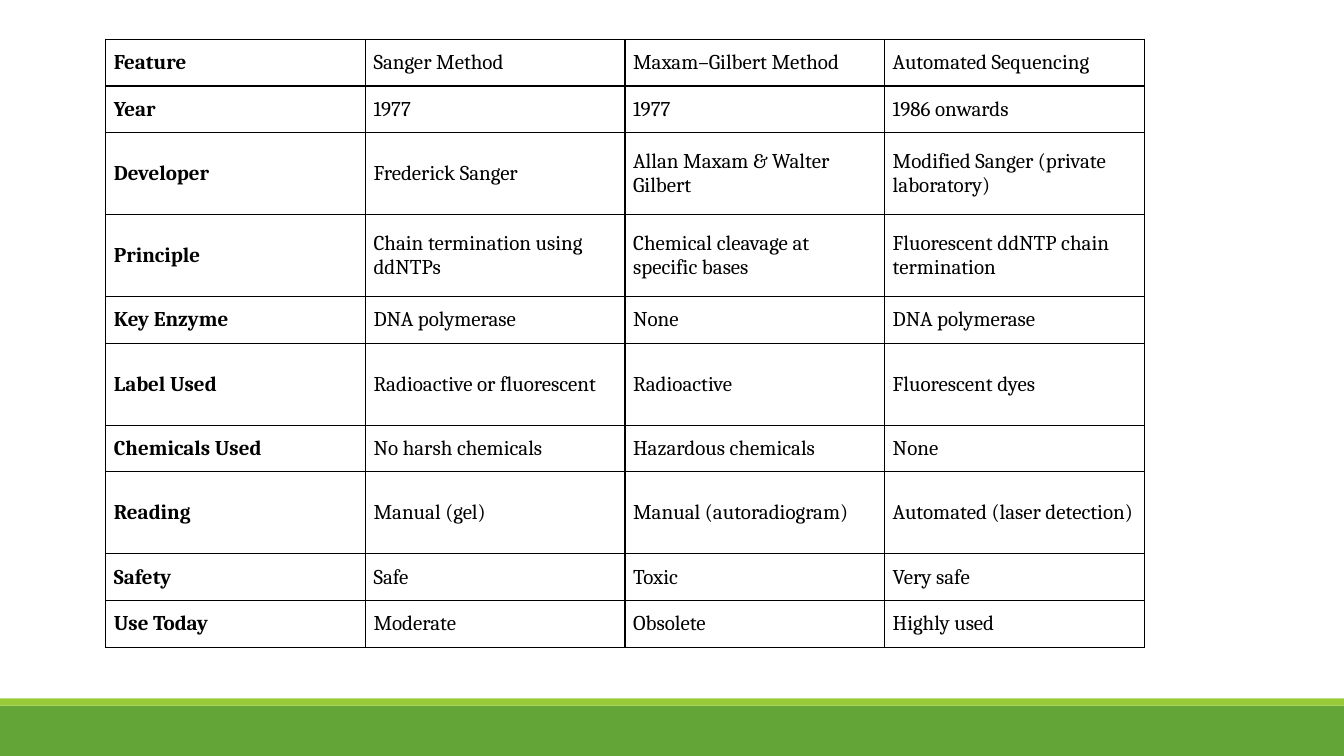
from dataclasses import dataclass

from lxml.etree import SubElement
from pptx import Presentation
from pptx.dml.color import RGBColor as Color
from pptx.enum.shapes import MSO_SHAPE as Shape
from pptx.enum.text import MSO_ANCHOR as Anchor
from pptx.oxml.ns import qn
from pptx.slide import Slide
from pptx.table import _Cell as Cell
from pptx.util import Inches, Length, Pt


@dataclass(frozen=True)
class Theme:
    font: str = "Cambria"
    size: float = 15
    line: float = 1
    ink: str = "000000"
    paper: str = "FFFFFF"
    green: str = "63A537"
    lime: str = "99CB38"


@dataclass(frozen=True)
class Band:
    top: float
    height: float
    color: str


@dataclass(frozen=True)
class Row:
    texts: tuple[str, str, str, str]
    height: float


THEME = Theme()
WIDTH, HEIGHT = Inches(13.33), Inches(7.5)
COLS, ROWS = 133.3, 75
LEFT, TOP, SPAN = 10.5, 3.9, 25.75
LOW, TALL = 4.63, 8.13
SIDES = ("a:lnL", "a:lnR", "a:lnT", "a:lnB")

BANDS = (Band(70, 5, THEME.green), Band(69.3, 0.7, THEME.lime))

FEATURES = (
    Row(("Feature", "Sanger Method", "Maxam–Gilbert Method", "Automated Sequencing"), LOW),
    Row(("Year", "1977", "1977", "1986 onwards"), LOW),
    Row(("Developer", "Frederick Sanger", "Allan Maxam & Walter Gilbert",
         "Modified Sanger (private laboratory)"), TALL),
    Row(("Principle", "Chain termination using ddNTPs", "Chemical cleavage at specific bases",
         "Fluorescent ddNTP chain termination"), TALL),
    Row(("Key Enzyme", "DNA polymerase", "None", "DNA polymerase"), LOW),
    Row(("Label Used", "Radioactive or fluorescent", "Radioactive", "Fluorescent dyes"), TALL),
    Row(("Chemicals Used", "No harsh chemicals", "Hazardous chemicals", "None"), LOW),
    Row(("Reading", "Manual (gel)", "Manual (autoradiogram)", "Automated (laser detection)"), TALL),
    Row(("Safety", "Safe", "Toxic", "Very safe"), LOW),
    Row(("Use Today", "Moderate", "Obsolete", "Highly used"), LOW),
)


def across(cols: float) -> Length:
    return Length(round(WIDTH * cols / COLS))


def down(rows: float) -> Length:
    return Length(round(HEIGHT * rows / ROWS))


def draw_band(slide: Slide, band: Band) -> None:
    bar = slide.shapes.add_shape(Shape.RECTANGLE, 0, down(band.top), WIDTH, down(band.height))
    bar.shadow.inherit = False
    bar.fill.solid()
    bar.fill.fore_color.rgb = Color.from_string(band.color)
    bar.line.fill.background()


def frame_cell(cell: Cell) -> None:
    props = cell._tc.get_or_add_tcPr()
    for place, side in enumerate(SIDES):
        edge = SubElement(props, qn(side), w=str(Pt(THEME.line)))
        SubElement(SubElement(edge, qn("a:solidFill")), qn("a:srgbClr"), val=THEME.ink)
        props.insert(place, edge)


def fill_cell(cell: Cell, text: str, bold: bool) -> None:
    cell.text_frame.text = text
    cell.vertical_anchor = Anchor.MIDDLE
    cell.margin_left = cell.margin_right = Inches(0.08)
    cell.margin_top = cell.margin_bottom = Inches(0.04)
    cell.fill.solid()
    cell.fill.fore_color.rgb = Color.from_string(THEME.paper)
    font = cell.text_frame.paragraphs[0].runs[0].font
    font.name, font.size, font.bold = THEME.font, Pt(THEME.size), bold
    font.color.rgb = Color.from_string(THEME.ink)
    frame_cell(cell)


def draw_table(slide: Slide, rows: tuple[Row, ...]) -> None:
    count = len(rows[0].texts)
    total = sum(row.height for row in rows)
    table = slide.shapes.add_table(
        len(rows), count, across(LEFT), down(TOP), across(SPAN * count), down(total)
    ).table
    table.first_row = table.horz_banding = False
    for column in table.columns:
        column.width = across(SPAN)
    for y, row in enumerate(rows):
        table.rows[y].height = down(row.height)
        for x, text in enumerate(row.texts):
            fill_cell(table.cell(y, x), text, x == 0)


def main() -> None:
    deck = Presentation()
    deck.slide_width, deck.slide_height = WIDTH, HEIGHT
    slide = deck.slides.add_slide(deck.slide_layouts.get_by_name("Blank"))
    for band in BANDS:
        draw_band(slide, band)
    draw_table(slide, FEATURES)
    deck.save("out.pptx")


if __name__ == "__main__":
    main()
